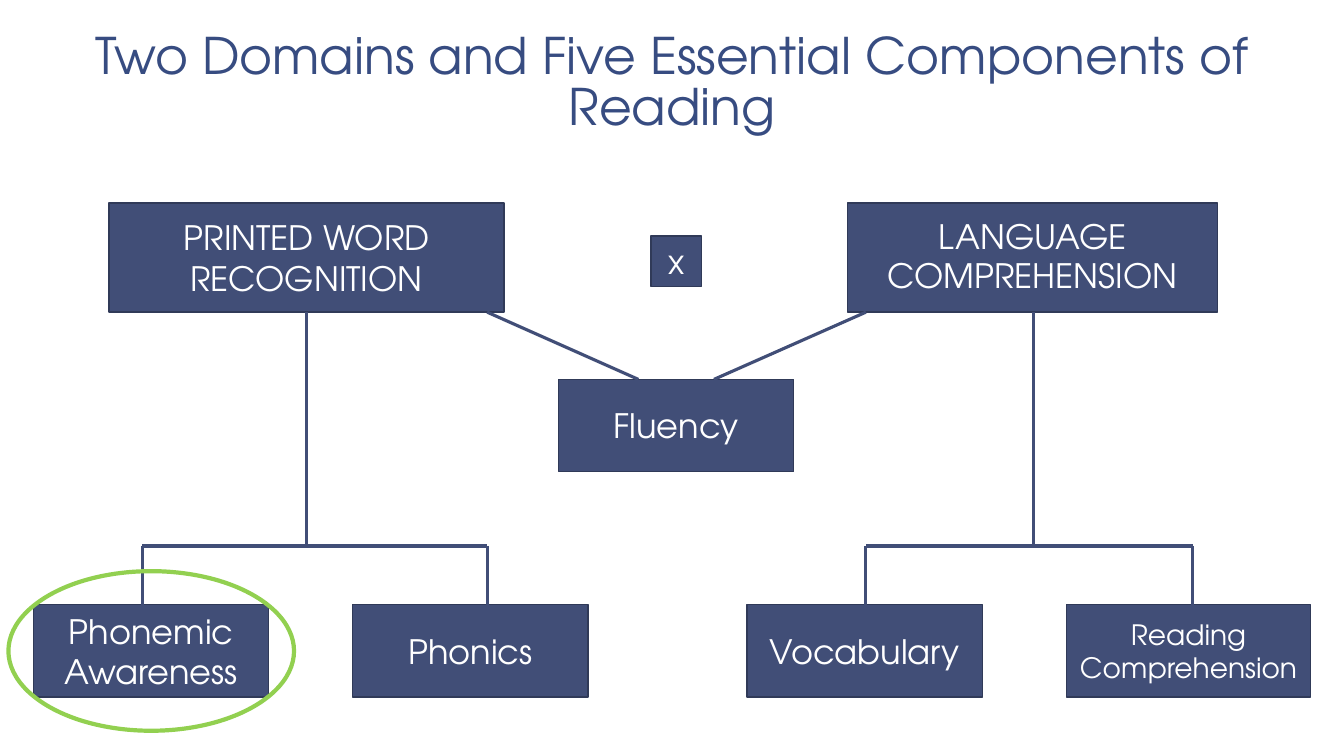
from lxml import etree
from pptx import Presentation
from pptx.dml.color import RGBColor
from pptx.enum import shapes, text
from pptx.oxml import ns
from pptx.util import Pt

NAVY = RGBColor(0x41, 0x4E, 0x77)
DARK_NAVY = RGBColor(0x30, 0x3A, 0x58)
TITLE_BLUE = RGBColor(0x37, 0x4C, 0x81)
GREEN = RGBColor(0x92, 0xD0, 0x50)
WHITE = RGBColor(0xFF, 0xFF, 0xFF)
FONT = "TeX Gyre Adventor"

DOMAIN_TOP, DOMAIN_BOTTOM = 145, 223
FLUENCY_TOP = 271
BRANCH_Y = 390
SKILL_TOP, SKILL_HEIGHT = 432, 66


def write(shape, wording, size, color, anchor, spacing=1.0, inset=(7.2, 3.6)):
    """Fill a shape with one centred, wrapped paragraph."""
    frame = shape.text_frame
    frame.word_wrap = True
    frame.vertical_anchor = anchor
    frame.margin_left = frame.margin_right = Pt(inset[0])
    frame.margin_top = frame.margin_bottom = Pt(inset[1])
    para = frame.paragraphs[0]
    para.text = wording
    para.alignment = text.PP_ALIGN.CENTER
    para.line_spacing = spacing
    para.font.name = FONT
    para.font.size = Pt(size)
    para.font.color.rgb = color


deck = Presentation()
deck.slide_width, deck.slide_height = Pt(960), Pt(540)
page = deck.slides.add_slide(deck.slide_layouts[6])

title = page.shapes.add_textbox(Pt(24), Pt(6), Pt(912), Pt(96))
write(title, "Two Domains and Five Essential Components of Reading", 36,
      TITLE_BLUE, text.MSO_ANCHOR.BOTTOM, 0.85, (9.4, 5))

# Wording, left, top, width, height, font size, line spacing, insets
boxes = [
    ("PRINTED WORD RECOGNITION", 78, DOMAIN_TOP, 282, 78, 24, 1.0, (7.2, 3.6)),
    ("LANGUAGE COMPREHENSION", 605.5, DOMAIN_TOP, 264, 78, 24, 0.95, (9.4, 5)),
    ("x", 465, 168.5, 36, 36, 24, 1.0, (7.2, 3.6)),
    ("Fluency", 399, FLUENCY_TOP, 168, 66, 24, 1.0, (7.2, 3.6)),
]
for wording, left, width, size in [
    ("Phonemic Awareness", 24, 168, 24),
    ("Phonics", 252, 168, 24),
    ("Vocabulary", 533.5, 168.5, 24),
    ("Reading Comprehension", 762, 174, 20),
]:
    boxes.append((wording, left, SKILL_TOP, width, SKILL_HEIGHT, size, 1.0, (7.2, 3.6)))

for wording, left, top, width, height, size, spacing, inset in boxes:
    box = page.shapes.add_shape(shapes.MSO_SHAPE.RECTANGLE,
                                Pt(left), Pt(top), Pt(width), Pt(height))
    box.shadow.inherit = False
    box.fill.solid()
    box.fill.fore_color.rgb = NAVY
    box.line.color.rgb = DARK_NAVY
    box.line.width = Pt(1)
    write(box, wording, size, WHITE, text.MSO_ANCHOR.MIDDLE, spacing, inset)

# Each domain has a line to Fluency and a bracket over its two skills
lines = []
for stem, outer, inner, fluency_x in [(219, 101.5, 348, 456), (738, 852, 618.5, 510)]:
    lines += [
        (inner, DOMAIN_BOTTOM, fluency_x, FLUENCY_TOP),
        (stem, DOMAIN_BOTTOM, stem, BRANCH_Y),
        (outer, BRANCH_Y, inner, BRANCH_Y),
        (outer, BRANCH_Y, outer, SKILL_TOP),
        (inner, BRANCH_Y, inner, SKILL_TOP),
    ]
for ends in lines:
    line = page.shapes.add_connector(shapes.MSO_CONNECTOR.STRAIGHT, *map(Pt, ends))
    line.line.color.rgb = NAVY
    line.line.width = Pt(2.25)
    etree.SubElement(line._element.spPr, ns.qn("a:effectLst"))

highlight = page.shapes.add_shape(shapes.MSO_SHAPE.OVAL, Pt(6), Pt(408), Pt(204), Pt(114))
highlight.shadow.inherit = False
highlight.fill.background()
highlight.line.color.rgb = GREEN
highlight.line.width = Pt(3)

deck.save("out.pptx")
